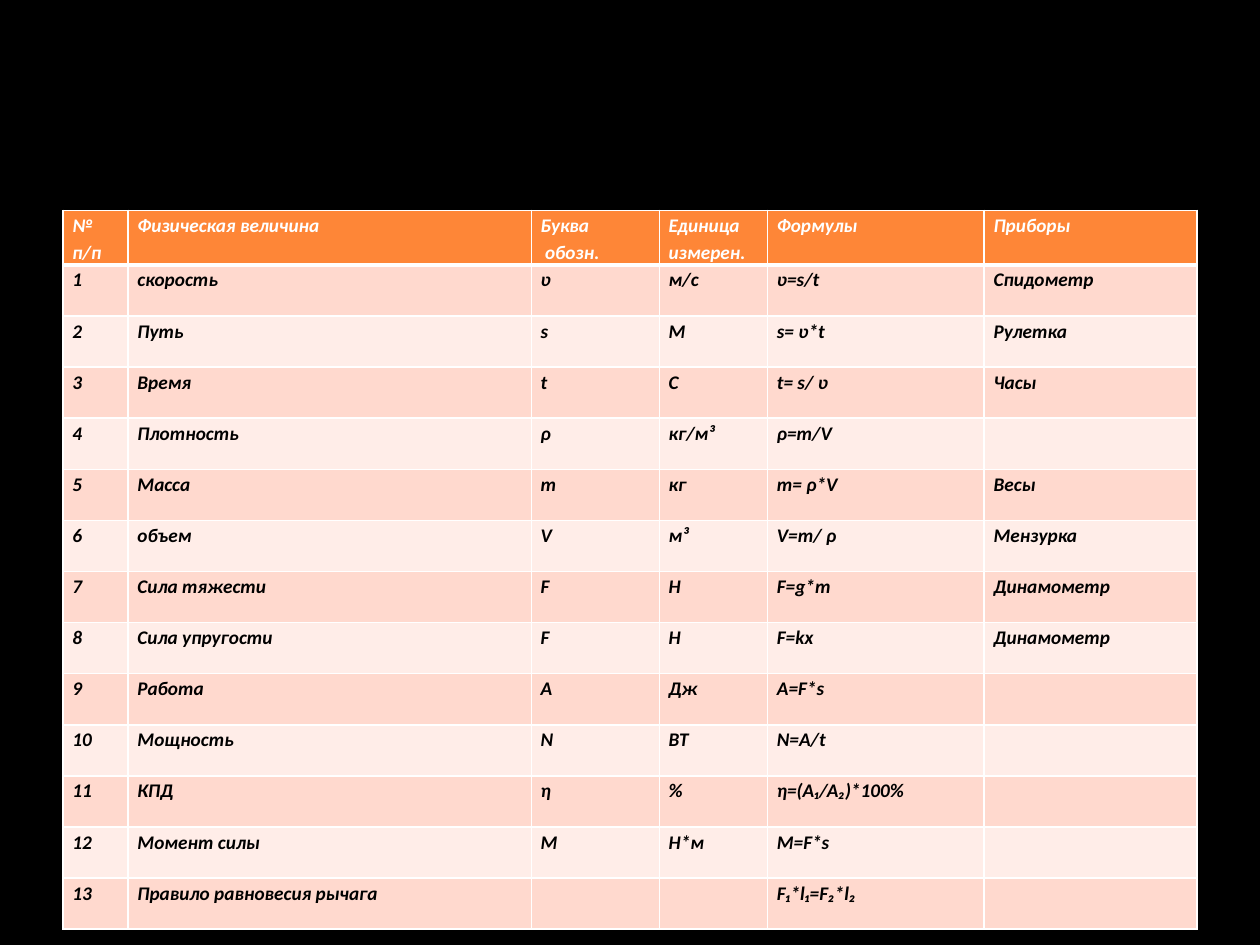
from dataclasses import dataclass
from typing import NamedTuple

from lxml import etree
from pptx import Presentation
from pptx import util as u
from pptx.dml.color import RGBColor
from pptx.oxml import ns


@dataclass(frozen=True)
class Theme:
    font: str = "Calibri"
    size: float = 11
    spacing: float = 1.15
    background: str = "000000"
    header: str = "FE8637"
    header_text: str = "FFFFFF"
    bands: tuple = ("FFD9CE", "FFEDE8")
    body_text: str = "000000"
    border: str = "FFFFFF"
    thin: float = 1
    thick: float = 3


class Quantity(NamedTuple):
    name: str
    symbol: str = ""
    unit: str = ""
    formula: str = ""
    device: str = ""


THEME = Theme()
HEADINGS = ("№ п/п", "Физическая величина", "Буква\n обозн.",
            "Единица измерен.", "Формулы", "Приборы")
WIDTHS = (1.31, 8.13, 2.58, 2.18, 4.37, 4.29)
ROW_HEIGHT = 1.03
QUANTITIES = (
    Quantity("скорость", "ʋ", "м/с", "ʋ=s/t", "Спидометр"),
    Quantity("Путь", "s", "М", "s= ʋ*t", "Рулетка"),
    Quantity("Время", "t", "С", "t= s/ ʋ", "Часы"),
    Quantity("Плотность", "ρ", "кг/м³", "ρ=m/V"),
    Quantity("Масса", "m", "кг", "m= ρ*V", "Весы"),
    Quantity("объем", "V", "м³", "V=m/ ρ", "Мензурка"),
    Quantity("Сила тяжести", "F", "Н", "F=g*m", "Динамометр"),
    Quantity("Сила упругости", "F", "Н", "F=kx", "Динамометр"),
    Quantity("Работа", "A", "Дж", "A=F*s"),
    Quantity("Мощность", "N", "ВТ", "N=A/t"),
    Quantity("КПД", "η", "%", "η=(A₁/A₂)*100%"),
    Quantity("Момент силы", "М", "Н*м", "М=F*s"),
    Quantity("Правило равновесия рычага", formula="F₁*l₁=F₂*l₂"),
)


def set_borders(cell, top: float, bottom: float) -> None:
    tcPr = cell._tc.get_or_add_tcPr()
    sides = {"L": THEME.thin, "R": THEME.thin, "T": top, "B": bottom}
    for side, width in sides.items():
        ln = etree.SubElement(tcPr, ns.qn(f"a:ln{side}"), w=str(u.Pt(width)))
        fill = etree.SubElement(ln, ns.qn("a:solidFill"))
        etree.SubElement(fill, ns.qn("a:srgbClr"), val=THEME.border)


def write_text(tf, text: str, *, color: str) -> None:
    for i, line in enumerate(text.split("\n")):
        p = tf.add_paragraph() if i else tf.paragraphs[0]
        p.line_spacing = THEME.spacing
        r = p.add_run()
        r.text = line
        r.font.name = THEME.font
        r.font.size = u.Pt(THEME.size)
        r.font.bold = r.font.italic = True
        r.font.color.rgb = RGBColor.from_string(color)


def draw_cell(cell, text: str, *, fill: str, color: str,
              top: float, bottom: float) -> None:
    cell.margin_left = cell.margin_right = u.Cm(0.19)
    cell.margin_top = cell.margin_bottom = 0
    set_borders(cell, top, bottom)
    cell.fill.solid()
    cell.fill.fore_color.rgb = RGBColor.from_string(fill)
    if text:
        write_text(cell.text_frame, text, color=color)


def draw_table(s) -> None:
    rows = [HEADINGS] + [(str(i), *q) for i, q in enumerate(QUANTITIES, 1)]
    table = s.shapes.add_table(
        len(rows), len(WIDTHS), u.Cm(1.27), u.Cm(4.24),
        u.Cm(sum(WIDTHS)), u.Cm(ROW_HEIGHT * len(rows))).table
    for column, width in zip(table.columns, WIDTHS):
        column.width = u.Cm(width)
    for i, values in enumerate(rows):
        table.rows[i].height = u.Cm(ROW_HEIGHT)
        for j, value in enumerate(values):
            draw_cell(
                table.cell(i, j), value,
                fill=THEME.bands[(i - 1) % 2] if i else THEME.header,
                color=THEME.body_text if i else THEME.header_text,
                top=THEME.thick if i == 1 else THEME.thin,
                bottom=THEME.thin if i else THEME.thick)


def main() -> None:
    prs = Presentation()
    prs.slide_width, prs.slide_height = u.Cm(25.4), u.Cm(19.05)
    s = prs.slides.add_slide(prs.slide_layouts[6])
    s.background.fill.solid()
    s.background.fill.fore_color.rgb = RGBColor.from_string(THEME.background)
    draw_table(s)
    prs.save("out.pptx")


if __name__ == "__main__":
    main()
